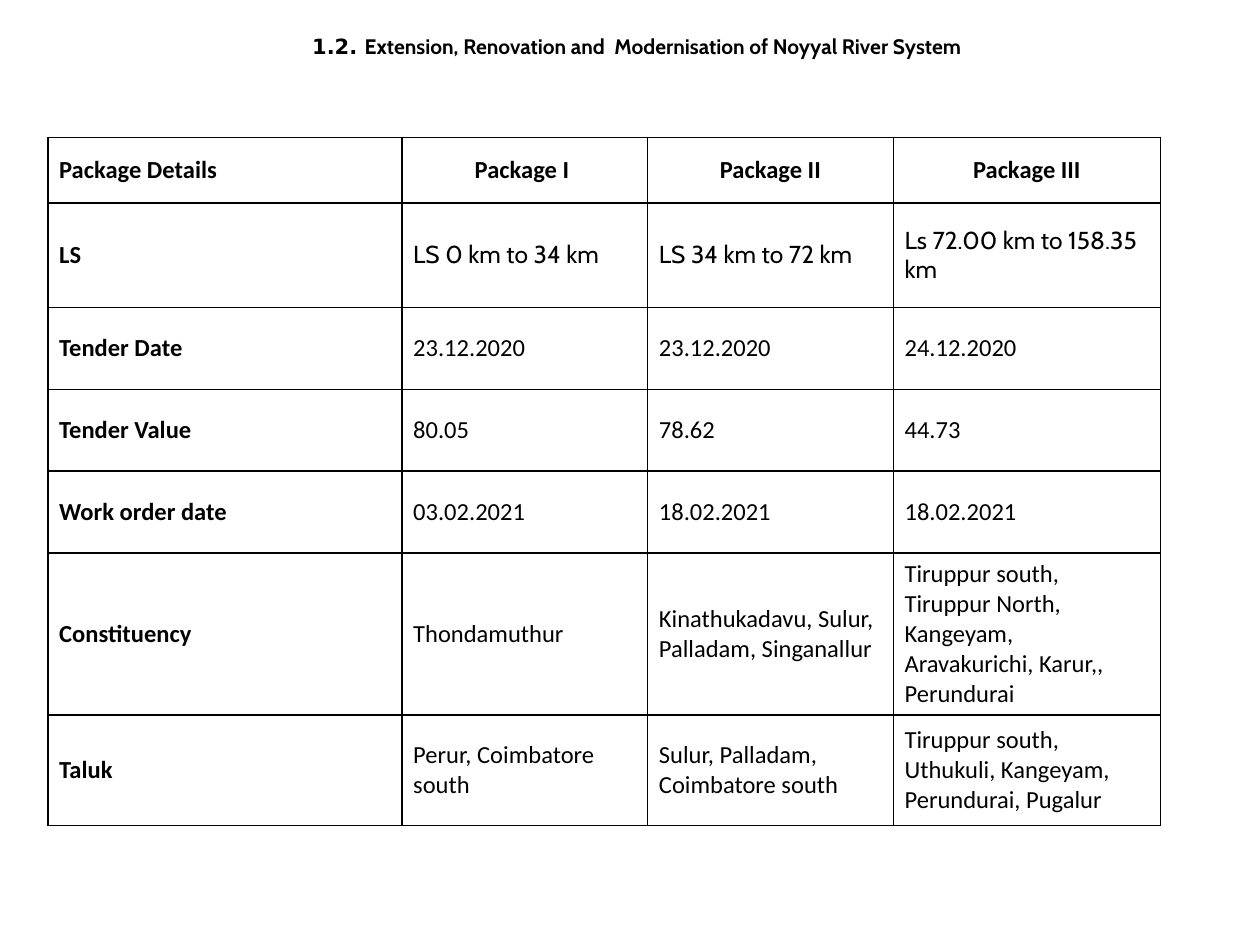
from lxml import etree
from pptx import Presentation
from pptx.dml.color import RGBColor
from pptx.enum.text import MSO_ANCHOR, PP_ALIGN
from pptx.oxml.ns import qn
from pptx.util import Inches, Pt

CENTER = PP_ALIGN.CENTER
LEFT = PP_ALIGN.LEFT
MIDDLE = MSO_ANCHOR.MIDDLE

BLACK = "000000"
TITLE_PARTS = [
    ("1.2. ", "DejaVu Sans"),
    ("Extension, Renovation and  Modernisation of Noyyal River System ", "Cabin"),
]
COLUMN_WIDTHS = [2.81, 1.95, 1.95, 2.12]
ROW_HEIGHTS = [0.52, 0.83, 0.65, 0.65, 0.65, 0.83, 0.88]
PACKAGES = [
    ["Package Details", "Package I ", "Package II", "Package III"],
    ["LS", "LS 0 km to 34 km", "LS 34 km to 72 km", "Ls 72.00 km to 158.35 km"],
    ["Tender Date", "23.12.2020", "23.12.2020", "24.12.2020"],
    ["Tender Value", "80.05", "78.62", "44.73"],
    ["Work order date", "03.02.2021", "18.02.2021", "18.02.2021"],
    ["Constituency", "Thondamuthur", "Kinathukadavu, Sulur, Palladam, Singanallur",
     "Tiruppur south, Tiruppur North,  Kangeyam,  Aravakurichi, Karur,, Perundurai"],
    ["Taluk", "Perur, Coimbatore south", "Sulur, Palladam, Coimbatore south",
     "Tiruppur south, Uthukuli, Kangeyam, Perundurai, Pugalur"],
]


def rgb(color):
    return RGBColor.from_string(color)


def format_run(run, font_name, size, bold):
    run.font.name = font_name
    run.font.size = Pt(size)
    run.font.bold = bold
    run.font.color.rgb = rgb(BLACK)


def add_title(slide):
    box = slide.shapes.add_textbox(Inches(0.3), Inches(0.22), Inches(9.55), Inches(0.3))
    box.text_frame.word_wrap = True
    paragraph = box.text_frame.paragraphs[0]
    paragraph.alignment = CENTER
    for text, font_name in TITLE_PARTS:
        run = paragraph.add_run()
        run.text = text
        format_run(run, font_name, 12, True)


def set_borders(cell, color, width):
    properties = cell._tc.get_or_add_tcPr()
    for position, side in enumerate(("lnL", "lnR", "lnT", "lnB")):
        line = etree.Element(qn(f"a:{side}"), w=str(Pt(width)))
        fill = etree.SubElement(line, qn("a:solidFill"))
        etree.SubElement(fill, qn("a:srgbClr"), val=color)
        properties.insert(position, line)


def fill_cell(cell, text, font_name, bold, alignment):
    cell.fill.background()
    cell.vertical_anchor = MIDDLE
    cell.margin_left = cell.margin_right = Inches(0.09)
    cell.margin_top = cell.margin_bottom = Inches(0.05)
    cell.text_frame.text = text
    paragraph = cell.text_frame.paragraphs[0]
    paragraph.alignment = alignment
    format_run(paragraph.runs[0], font_name, 14, bold)
    set_borders(cell, BLACK, 1)


def add_package_table(slide):
    table = slide.shapes.add_table(
        len(PACKAGES), len(COLUMN_WIDTHS), Inches(0.38), Inches(1.09),
        Inches(sum(COLUMN_WIDTHS)), Inches(sum(ROW_HEIGHTS))).table
    table.first_row = False
    table.horz_banding = False
    for column, width in zip(table.columns, COLUMN_WIDTHS):
        column.width = Inches(width)
    for row, height in zip(table.rows, ROW_HEIGHTS):
        row.height = Inches(height)
    for row_index, texts in enumerate(PACKAGES):
        for column_index, text in enumerate(texts):
            is_header = row_index == 0
            is_label = column_index == 0
            font_name = "Cabin" if texts[0] == "LS" and not is_label else "Calibri"
            alignment = CENTER if is_header and not is_label else LEFT
            fill_cell(table.cell(row_index, column_index), text, font_name,
                      is_header or is_label, alignment)


def main():
    presentation = Presentation()
    presentation.slide_width = Inches(10)
    presentation.slide_height = Inches(7.5)
    slide = presentation.slides.add_slide(presentation.slide_layouts[6])
    add_package_table(slide)
    add_title(slide)
    presentation.save("out.pptx")


if __name__ == "__main__":
    main()
